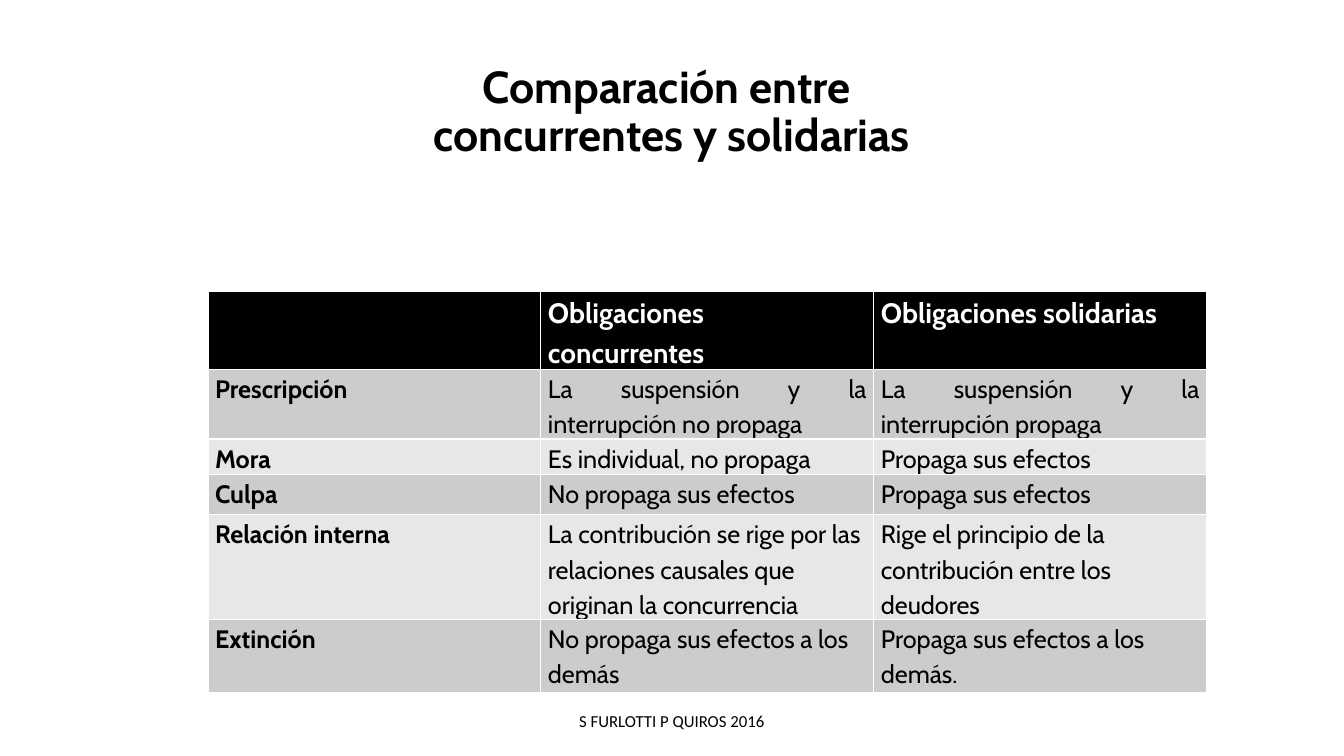
import pptx
import pptx.dml.color
import pptx.enum.text
import pptx.oxml
import pptx.oxml.ns
import pptx.util
from pptx.util import Cm

BLACK = pptx.dml.color.RGBColor(0x00, 0x00, 0x00)
WHITE = pptx.dml.color.RGBColor(0xFF, 0xFF, 0xFF)
DARK_BAND = pptx.dml.color.RGBColor(0xCC, 0xCC, 0xCC)
LIGHT_BAND = pptx.dml.color.RGBColor(0xE7, 0xE7, 0xE7)

ALIGN = pptx.enum.text.PP_ALIGN
MIDDLE = pptx.enum.text.MSO_ANCHOR.MIDDLE

COLUMN_WIDTH = Cm(8.39)
ROW_HEIGHTS = [Cm(height) for height in (1.96, 1.75, 0.89, 1.02, 2.64, 1.85)]
LEFT_ALIGNED_ROWS = ("Relación interna", "Extinción")
ROWS = [
    ("", "Obligaciones concurrentes", "Obligaciones solidarias"),
    ("Prescripción", "La suspensión y la interrupción no propaga",
     "La suspensión y la interrupción propaga"),
    ("Mora", "Es individual, no propaga", "Propaga sus efectos"),
    ("Culpa", "No propaga sus efectos", "Propaga sus efectos"),
    ("Relación interna",
     "La contribución se rige por las relaciones causales que originan la concurrencia",
     "Rige el principio de la contribución entre los deudores"),
    ("Extinción", "No propaga sus efectos a los demás",
     "Propaga sus efectos a los demás."),
]


def set_attributes(target, values):
    """Set every attribute named in a dict of format values."""
    for name, value in values.items():
        setattr(target, name, value)


def write_lines(paragraph, lines, alignment, spacing, color, font_values):
    """Fill a paragraph with lines parted by line breaks."""
    set_attributes(paragraph, {"alignment": alignment, "line_spacing": spacing})
    for index, line in enumerate(lines):
        if index:
            paragraph.add_line_break()
        run = paragraph.add_run()
        run.text = line
        set_attributes(run.font, font_values)
        run.font.color.rgb = color


def add_text(slide, box, lines, spacing, font_values):
    """Add a centred text box."""
    text_frame = slide.shapes.add_textbox(*box).text_frame
    set_attributes(text_frame, {"word_wrap": True, "vertical_anchor": MIDDLE})
    write_lines(text_frame.paragraphs[0], lines, ALIGN.CENTER, spacing, BLACK, font_values)


def add_borders(cell):
    """Draw thin white lines on the four sides of a cell."""
    properties = cell._tc.get_or_add_tcPr()
    for side in ("lnL", "lnR", "lnT", "lnB"):
        properties.append(pptx.oxml.parse_xml(
            f'<a:{side} {pptx.oxml.ns.nsdecls("a")} w="{pptx.util.Pt(1)}">'
            f'<a:solidFill><a:srgbClr val="{WHITE}"/></a:solidFill></a:{side}>'))


def format_cell(cell, text, fill, alignment, color, font_values):
    """Give a table cell its borders, fill, margins and text."""
    add_borders(cell)
    cell.fill.solid()
    cell.fill.fore_color.rgb = fill
    set_attributes(cell, {"margin_left": Cm(0.18), "margin_right": Cm(0.18),
                          "margin_top": 0, "margin_bottom": 0})
    if text:
        write_lines(cell.text_frame.paragraphs[0], [text], alignment, 1.15,
                    color, font_values)


def add_comparison_table(slide):
    """Add the table with a black header and alternating grey rows."""
    column_count = len(ROWS[0])
    table = slide.shapes.add_table(
        len(ROWS), column_count, Cm(5.24), Cm(7.35),
        COLUMN_WIDTH * column_count, sum(ROW_HEIGHTS)).table
    for column in table.columns:
        column.width = COLUMN_WIDTH
    for row_index, texts in enumerate(ROWS):
        table.rows[row_index].height = ROW_HEIGHTS[row_index]
        is_header = row_index == 0
        band = DARK_BAND if row_index % 2 else LIGHT_BAND
        for column_index, text in enumerate(texts):
            is_label = column_index == 0
            left_aligned = texts[0] in LEFT_ALIGNED_ROWS and not is_label
            format_cell(
                table.cell(row_index, column_index), text,
                BLACK if is_header else band,
                ALIGN.LEFT if left_aligned else ALIGN.JUSTIFY,
                WHITE if is_header else BLACK,
                {"name": "Cabin", "bold": is_header or is_label,
                 "size": pptx.util.Pt(20 if is_header else 18)})


def main():
    """Build the slide and save it."""
    presentation = pptx.Presentation()
    set_attributes(presentation, {"slide_width": Cm(33.87), "slide_height": Cm(19.05)})
    slide = presentation.slides.add_slide(presentation.slide_layouts[6])
    add_text(slide, (Cm(2.33), Cm(1.01), Cm(29.21), Cm(3.68)),
             ["Comparación entre ", "concurrentes y solidarias"], 0.9,
             {"name": "Cabin", "size": pptx.util.Pt(32), "bold": True})
    add_comparison_table(slide)
    add_text(slide, (Cm(11.22), Cm(17.66), Cm(11.43), Cm(1.01)),
             ["S FURLOTTI P QUIROS 2016"], 1.0,
             {"name": "Calibri", "size": pptx.util.Pt(12), "bold": False})
    presentation.save("out.pptx")


if __name__ == "__main__":
    main()
